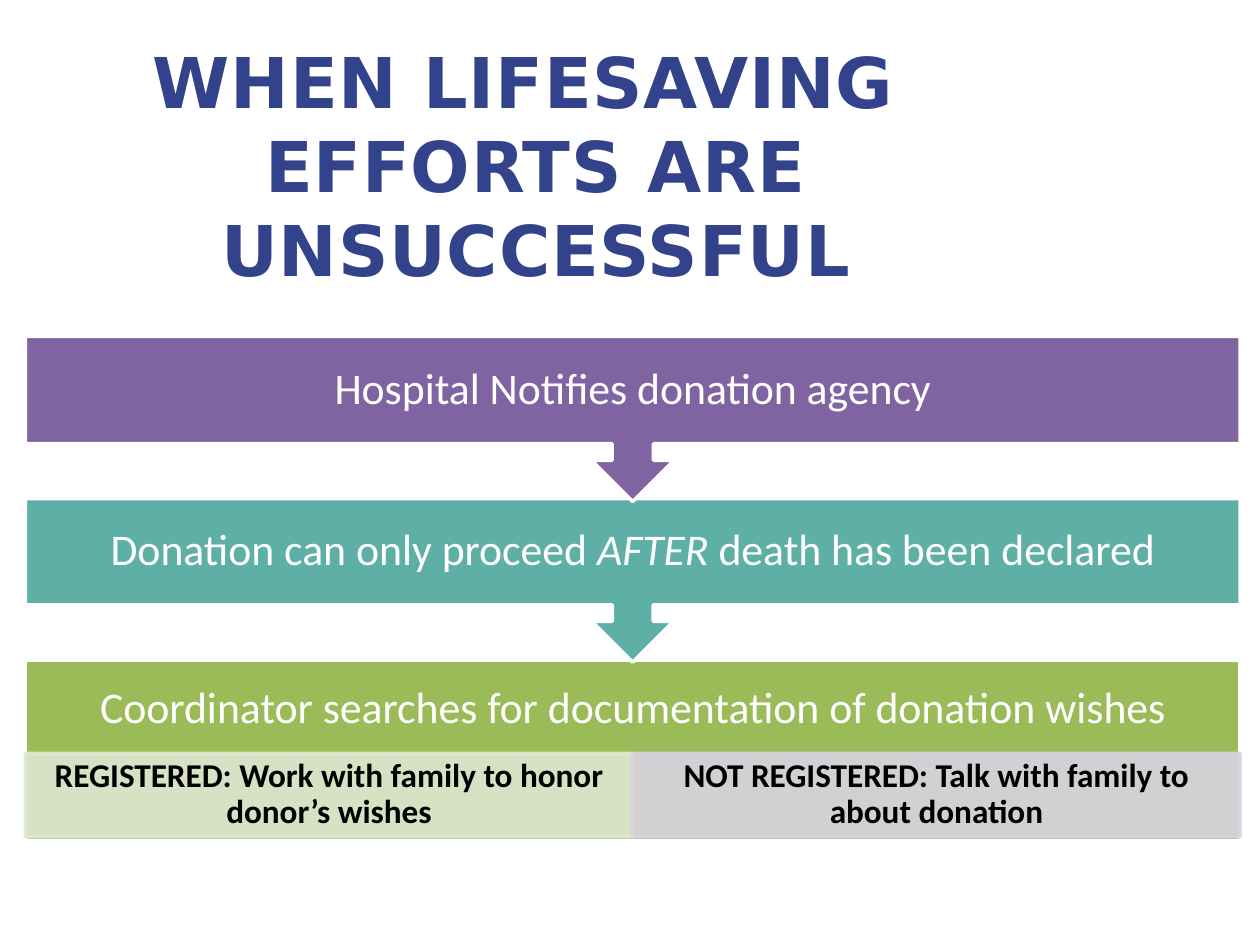
from dataclasses import dataclass

from lxml.etree import SubElement
from pptx import Presentation
from pptx.dml.color import RGBColor
from pptx.enum.shapes import MSO_SHAPE
from pptx.enum.text import MSO_ANCHOR, MSO_AUTO_SIZE, PP_ALIGN
from pptx.oxml.ns import qn
from pptx.util import Cm, Pt

LEFT, WIDTH = 0.51, 24.49
STAGE_TOP, STAGE_STEP = 6.78, 3.27
BRANCH_TOP, BRANCH_HEIGHT = 15.19, 1.68
WHITE, BLACK, NAVY = "FFFFFF", "000000", "32428B"


@dataclass(frozen=True)
class Box:
    left: float
    top: float
    width: float
    height: float

    def lengths(self) -> list[Cm]:
        return [Cm(side) for side in (self.left, self.top, self.width, self.height)]


@dataclass(frozen=True)
class Words:
    text: str
    italic: bool = False


@dataclass(frozen=True)
class TextStyle:
    font: str
    size: float
    color: str
    bold: bool = False


@dataclass(frozen=True)
class Stage:
    words: list[Words]
    color: str
    height: float
    text_height: float
    outline: MSO_SHAPE = MSO_SHAPE.UP_ARROW_CALLOUT
    rotation: float = 180


@dataclass(frozen=True)
class Branch:
    text: str
    color: str


STAGES = [
    Stage([Words("Hospital Notifies donation agency")], "8064A2", 3.33, 2.16),
    Stage(
        [
            Words("Donation can only proceed "),
            Words("AFTER", italic=True),
            Words(" death has been declared"),
        ],
        "5EAFA6", 3.3, 2.13,
    ),
    Stage(
        [Words("Coordinator searches for documentation of donation wishes")],
        "9BBB59", 3.63, 1.96, MSO_SHAPE.RECTANGLE, 0,
    ),
]
BRANCHES = [
    Branch("REGISTERED: Work with family to honor donor’s wishes", "DEE7D1"),
    Branch("NOT REGISTERED: Talk with family to about donation", "D8D3E0"),
]
TITLE_LINES = ["WHEN LIFESAVING ", "EFFORTS ARE UNSUCCESSFUL"]

STAGE_STYLE = TextStyle("Calibri", 25, WHITE)
BRANCH_STYLE = TextStyle("Calibri", 19, BLACK, bold=True)
TITLE_STYLE = TextStyle("DejaVu Sans", 40, NAVY, bold=True)


def rgb(color: str) -> RGBColor:
    return RGBColor.from_string(color)


def add_panel(slide, outline: MSO_SHAPE, box: Box, fill: str, line: str,
              opacity: int = 100, rotation: float = 0) -> None:
    panel = slide.shapes.add_shape(outline, *box.lengths())
    panel.shadow.inherit = False
    panel.rotation = rotation
    panel.fill.solid()
    panel.fill.fore_color.rgb = rgb(fill)
    panel.line.color.rgb = rgb(line)
    panel.line.width = Pt(2)
    if opacity < 100:
        for color in list(panel._element.spPr.iter(qn("a:srgbClr"))):
            SubElement(color, qn("a:alpha"), val=str(opacity * 1000))


def add_text_frame(slide, box: Box, side: float, edge: float, anchor: MSO_ANCHOR):
    frame = slide.shapes.add_textbox(*box.lengths()).text_frame
    frame.word_wrap = True
    frame.vertical_anchor = anchor
    frame.margin_left = frame.margin_right = Cm(side)
    frame.margin_top = frame.margin_bottom = Cm(edge)
    return frame


def fill_paragraph(paragraph, words: list[Words], style: TextStyle,
                   spacing: float = 1.0) -> None:
    paragraph.alignment = PP_ALIGN.CENTER
    paragraph.line_spacing = spacing
    for part in words:
        run = paragraph.add_run()
        run.text = part.text
        run.font.name = style.font
        run.font.size = Pt(style.size)
        run.font.bold = style.bold
        run.font.italic = part.italic
        run.font.color.rgb = rgb(style.color)


def add_text_shadow(run) -> None:
    properties = run._r.get_or_add_rPr()
    properties.set("spc", "50")
    effects = properties.makeelement(qn("a:effectLst"), {})
    properties.find(qn("a:solidFill")).addnext(effects)
    shadow = SubElement(effects, qn("a:outerShdw"), blurRad="38100",
                        dist="38100", dir="5400000", algn="tl")
    color = SubElement(shadow, qn("a:srgbClr"), val=BLACK)
    SubElement(color, qn("a:alpha"), val="40000")


def add_stage(slide, stage: Stage, top: float) -> None:
    add_panel(slide, stage.outline, Box(LEFT, top, WIDTH, stage.height),
              stage.color, WHITE, rotation=stage.rotation)
    frame = add_text_frame(slide, Box(LEFT, top, WIDTH, stage.text_height),
                           0.48, 0.48, MSO_ANCHOR.MIDDLE)
    fill_paragraph(frame.paragraphs[0], stage.words, STAGE_STYLE, 0.9)


def add_branch(slide, branch: Branch, box: Box) -> None:
    add_panel(slide, MSO_SHAPE.RECTANGLE, box, branch.color, branch.color, opacity=90)
    frame = add_text_frame(slide, box, 0.38, 0.08, MSO_ANCHOR.MIDDLE)
    fill_paragraph(frame.paragraphs[0], [Words(branch.text)], BRANCH_STYLE, 0.9)


def add_title(slide) -> None:
    frame = add_text_frame(slide, Box(0.43, 0.64, 20.75, 5.38),
                           0.25, 0.13, MSO_ANCHOR.TOP)
    frame.auto_size = MSO_AUTO_SIZE.SHAPE_TO_FIT_TEXT
    for index, line in enumerate(TITLE_LINES):
        paragraph = frame.add_paragraph() if index else frame.paragraphs[0]
        fill_paragraph(paragraph, [Words(line)], TITLE_STYLE)
        for run in paragraph.runs:
            add_text_shadow(run)


def main() -> None:
    presentation = Presentation()
    presentation.slide_width, presentation.slide_height = Cm(25.4), Cm(19.05)
    slide = presentation.slides.add_slide(presentation.slide_layouts[6])

    for index, stage in reversed(list(enumerate(STAGES))):
        add_stage(slide, stage, STAGE_TOP + index * STAGE_STEP)
        if stage is STAGES[-1]:
            branch_width = WIDTH / len(BRANCHES)
            for column, branch in enumerate(BRANCHES):
                add_branch(slide, branch, Box(LEFT + column * branch_width, BRANCH_TOP,
                                              branch_width, BRANCH_HEIGHT))
    add_title(slide)
    presentation.save("out.pptx")


if __name__ == "__main__":
    main()
